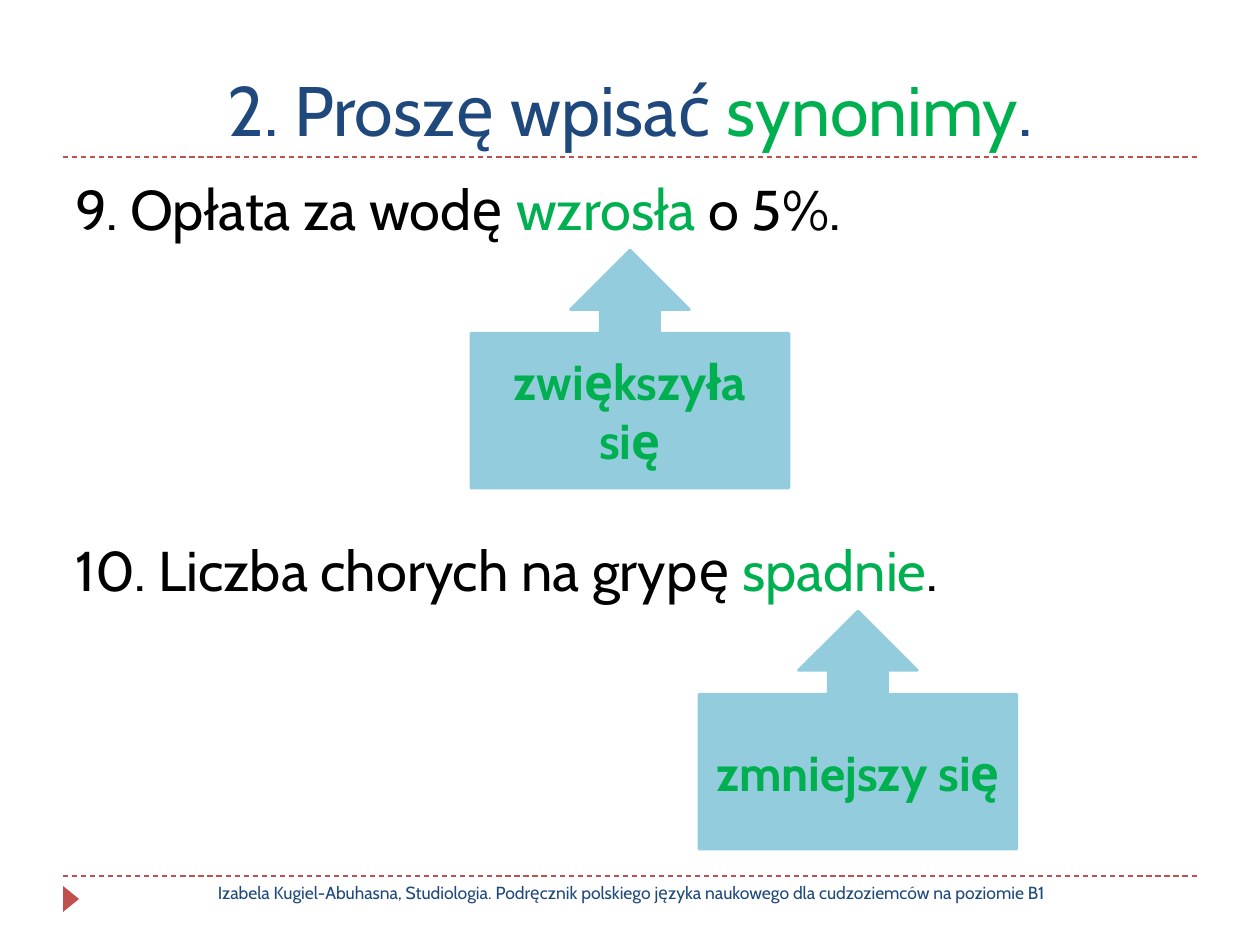
from pptx import Presentation
from pptx import util as u
from pptx.dml.color import RGBColor
from pptx.enum import dml, shapes, text
from pptx.oxml.ns import qn
from lxml import etree

PX = 914400 / 126
FONT = "Cabin"
NAVY, GREEN, BLACK = "1F497D", "00B050", "000000"
RED, SKY = "C0504D", "93CDDD"


def px(*lengths):
    """Turn pixel lengths into EMU."""
    return [u.Emu(round(length * PX)) for length in lengths]


def colour(value):
    """Turn a hex string into a colour."""
    return RGBColor.from_string(value)


def write(box, spans, size, align=text.PP_ALIGN.LEFT,
          anchor=text.MSO_ANCHOR.TOP, bold=False, before=0):
    """Fill a shape with one paragraph of (words, colour) spans."""
    frame = box.text_frame
    frame.word_wrap = True
    frame.auto_size = text.MSO_AUTO_SIZE.NONE
    frame.vertical_anchor = anchor
    para = frame.paragraphs[0]
    para.alignment = align
    para.space_before = u.Pt(before)
    for words, tint in spans:
        span = para.add_run()
        span.text = words
        span.font.name = FONT
        span.font.size = u.Pt(size)
        span.font.bold = bold
        span.font.color.rgb = colour(tint)


def place(box, left, top, width, height):
    """Move and size a placeholder."""
    box.left, box.top, box.width, box.height = px(left, top, width, height)


def add_rule(page, y):
    """Draw a dashed red line across the page."""
    rule = page.shapes.add_connector(
        shapes.MSO_CONNECTOR.STRAIGHT, *px(63, y, 1197, y))
    rule.line.color.rgb = colour(RED)
    rule.line.width = u.Pt(0.75)
    rule.line.dash_style = dml.MSO_LINE.DASH
    etree.SubElement(rule._element.spPr, qn("a:effectLst"))


def add_solid(page, kind, tint, *bounds):
    """Draw a preset shape in one colour."""
    shape = page.shapes.add_shape(kind, *px(*bounds))
    shape.shadow.inherit = False
    shape.fill.solid()
    shape.fill.fore_color.rgb = colour(tint)
    shape.line.fill.background()
    return shape


def add_answer(page, words, left, top):
    """Draw a callout that points up at the word it replaces."""
    callout = add_solid(page, shapes.MSO_SHAPE.UP_ARROW_CALLOUT, SKY,
                        left, top, 318, 238)
    callout.line.color.rgb = colour(SKY)
    callout.line.width = u.Pt(1.5)
    write(callout, [(words, GREEN)], 28, text.PP_ALIGN.CENTER,
          text.MSO_ANCHOR.MIDDLE, bold=True)


def add_text(page, *bounds):
    """Add an empty text box."""
    return page.shapes.add_textbox(*px(*bounds))


def remove_bullet(box):
    """Take the bullet and indent off the first paragraph."""
    properties = box.text_frame.paragraphs[0]._p.get_or_add_pPr()
    properties.set("marL", "0")
    properties.set("indent", "0")
    etree.SubElement(properties, qn("a:buNone"))


def main():
    """Build the slide and save it."""
    deck = Presentation()
    deck.slide_width, deck.slide_height = px(1260, 945)
    page = deck.slides.add_slide(deck.slide_layouts[1])

    for y in (157, 876):
        add_rule(page, y)
    marker = add_solid(page, shapes.MSO_SHAPE.ISOSCELES_TRIANGLE, RED,
                       58, 891, 26, 16)
    marker.rotation = 90

    title, body = page.placeholders
    place(title, 63, 21, 1134, 136)
    write(title, [("2. Proszę wpisać ", NAVY), ("synonimy", GREEN),
                  (".", NAVY)], 40, text.PP_ALIGN.CENTER,
          text.MSO_ANCHOR.BOTTOM)

    place(body, 63, 168, 1134, 344)
    write(body, [("9. Opłata za wodę ", BLACK), ("wzrosła", GREEN),
                 (" o 5%.", BLACK)], 32, before=6)
    remove_bullet(body)

    sentence = add_text(page, 63, 529, 1134, 344)
    write(sentence, [("10. Liczba chorych na grypę ", BLACK),
                     ("spadnie", GREEN), (".", BLACK)], 32, before=6)

    add_answer(page, "zwiększyła się", 471, 250)
    add_answer(page, "zmniejszy się", 699, 611)

    credit = add_text(page, 110, 876, 1042, 50)
    write(credit, [("Izabela Kugiel-Abuhasna, Studiologia. Podręcznik "
                    "polskiego języka naukowego dla cudzoziemców na "
                    "poziomie B1", NAVY)], 10, text.PP_ALIGN.CENTER)

    deck.save("out.pptx")


if __name__ == "__main__":
    main()
